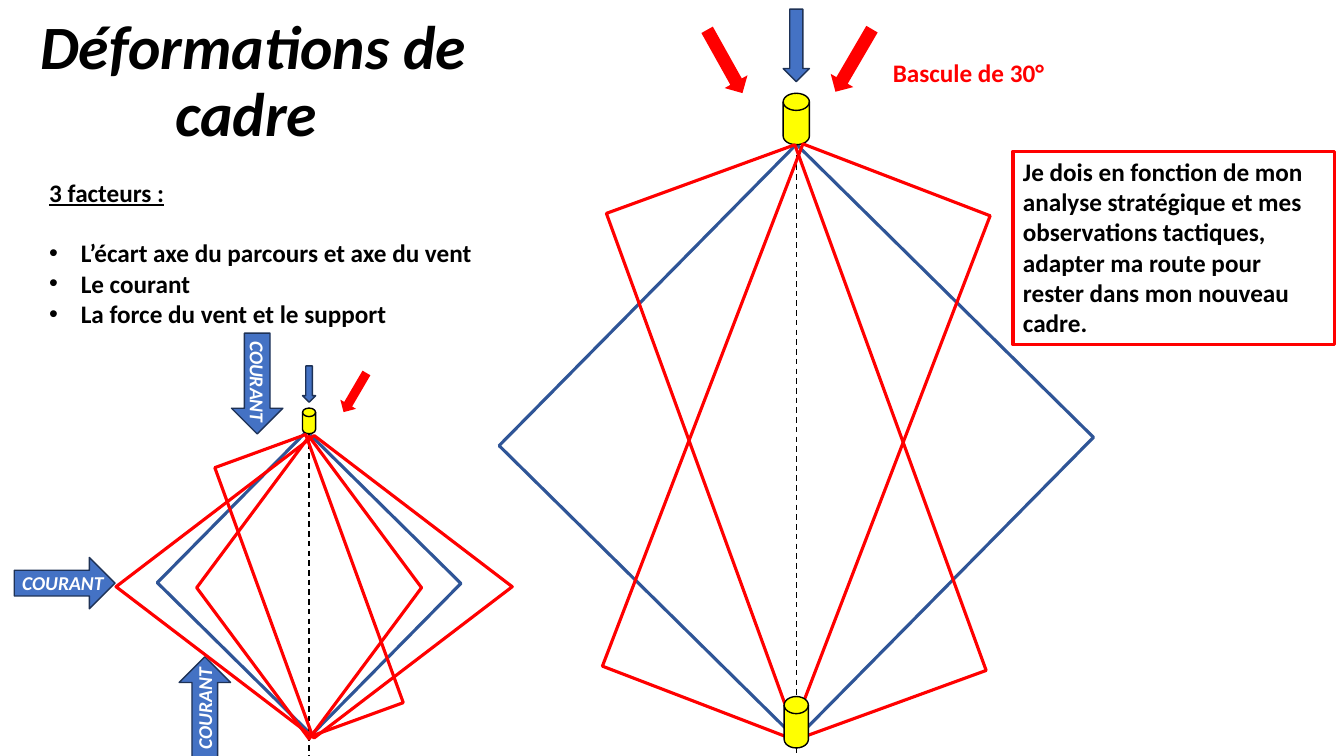
from lxml import etree
from pptx import Presentation
from pptx.dml.color import RGBColor
from pptx.enum import dml, shapes, text
from pptx.oxml import ns
from pptx.util import Pt

BLACK = RGBColor(0x00, 0x00, 0x00)
WHITE = RGBColor(0xFF, 0xFF, 0xFF)
RED = RGBColor(0xFF, 0x00, 0x00)
YELLOW = RGBColor(0xFF, 0xFF, 0x00)
BLUE = RGBColor(0x44, 0x72, 0xC4)
FRAME_BLUE = RGBColor(0x2F, 0x55, 0x97)
EDGE_BLUE = RGBColor(0x1E, 0x32, 0x56)
FONT = "Calibri"
SLIDE_W, SLIDE_H = 960, 540
S = shapes.MSO_SHAPE


def add_centred(s, kind, cx, cy, w, h, rot=0, fill=None, line=None, width=1):
    """Add a preset shape by its centre; no fill or line colour means none."""
    sp = s.shapes.add_shape(kind, Pt(cx - w / 2), Pt(cy - h / 2), Pt(w), Pt(h))
    sp.rotation = rot
    sp.shadow.inherit = False
    if fill is None:
        sp.fill.background()
    else:
        sp.fill.solid()
        sp.fill.fore_color.rgb = fill
    if line is None:
        sp.line.fill.background()
    else:
        sp.line.color.rgb = line
        sp.line.width = Pt(width)
    return sp


def add_outline(s, kind, cx, cy, w, h, rot=0, color=RED):
    return add_centred(s, kind, cx, cy, w, h, rot, line=color, width=2.25)


def add_buoy(s, cx, cy, w, h):
    add_centred(s, S.FLOWCHART_MAGNETIC_DISK, cx, cy, w, h, fill=YELLOW, line=BLACK)


def format_runs(p, size, color, italic=None):
    for r in p.runs:
        r.font.name = FONT
        r.font.size = Pt(size)
        r.font.bold = True
        r.font.italic = italic
        r.font.color.rgb = color


def add_text(s, x, y, w, h, lines, size, color, italic=None, wrap=True):
    sp = s.shapes.add_textbox(Pt(x), Pt(y), Pt(w), Pt(h))
    tf = sp.text_frame
    tf.word_wrap = wrap
    tf.text = "\n".join(lines)
    for p in tf.paragraphs:
        format_runs(p, size, color, italic)
    return sp


def add_title(s, x, y, w, h):
    sp = s.shapes.title
    sp.left, sp.top, sp.width, sp.height = Pt(x), Pt(y), Pt(w), Pt(h)
    tf = sp.text_frame
    tf.text = "Déformations de cadre "
    tf.word_wrap = True
    tf.auto_size = text.MSO_AUTO_SIZE.NONE
    tf.vertical_anchor = text.MSO_ANCHOR.MIDDLE
    p = tf.paragraphs[0]
    p.alignment = text.PP_ALIGN.CENTER
    p.line_spacing = 0.9
    format_runs(p, 44, BLACK, italic=True)


def add_factors(s, x, y, w, h):
    sp = add_text(s, x, y, w, h, [
        "3 facteurs :",
        "L’écart axe du parcours et axe du vent",
        "Le courant",
        "La force du vent et le support",
    ], 18, BLACK)
    heading, *factors = sp.text_frame.paragraphs
    heading.runs[0].font.underline = True
    heading.space_after = Pt(21.6)
    for p in factors:
        pPr = p._p.get_or_add_pPr()
        pPr.set("marL", str(Pt(22.5)))
        pPr.set("indent", str(Pt(-22.5)))
        etree.SubElement(pPr, ns.qn("a:buFont"), typeface="Arial")
        etree.SubElement(pPr, ns.qn("a:buChar"), char="•")


def add_course(s, axis, top, scale, frame, tilted):
    """Draw wind arrow, buoy, axis, blue frame and left-tilted red frame.

    frame and tilted are (centre below top, width, height).
    """
    cy, w, h = frame
    add_outline(s, S.RECTANGLE, axis, top + cy, w, h, 44.6, FRAME_BLUE)
    add_buoy(s, axis, top + 78.5 * scale, 18.7 * scale, 36.7 * scale)
    cx = s.shapes.add_connector(shapes.MSO_CONNECTOR.STRAIGHT, Pt(axis),
                                Pt(top + 97 * scale), Pt(axis), Pt(SLIDE_H))
    cx.line.color.rgb = BLACK
    cx.line.width = Pt(1)
    cx.line.dash_style = dml.MSO_LINE.DASH
    etree.SubElement(cx._element.spPr, ns.qn("a:effectLst"))
    add_centred(s, S.DOWN_ARROW, axis, top + 25.9 * scale, 18.7 * scale,
                51.8 * scale, fill=BLUE, line=EDGE_BLUE)
    cy, w, h = tilted
    add_outline(s, S.RECTANGLE, axis, top + cy, w, h, -20)


def add_wind_shift(s, axis, top):
    add_course(s, axis, top, 1, (308.9, 298.1, 302.4), (309.2, 143.3, 399.6))
    add_outline(s, S.RECTANGLE, axis, top + 308.5, 143.3, 399.6, 21)
    add_buoy(s, axis, top + 509.4, 17.3, 36.7)
    for dx, dy, rot in ((41, 36.7, 30.3), (-51.1, 37.4, -29.2)):
        add_centred(s, S.DOWN_ARROW, axis + dx, top + dy, 18.7, 51.8, rot, RED)
    add_text(s, axis + 61.9, top + 30.9, 126.7, 28.8, ["Bascule de 30°"],
             18, RED, wrap=False)


def add_current(s, cx, cy, rot, dx, dy):
    """Draw a current arrow whose label is shifted by (dx, dy) to its tip."""
    add_centred(s, S.RIGHT_ARROW, cx, cy, 72, 36.7, rot, BLUE, EDGE_BLUE)
    w, h = 87.8, 24.5
    sp = add_text(s, cx + dx - w / 2, cy + dy - h / 2, w, h, ["COURANT"],
                  14, WHITE, italic=True)
    sp.rotation = rot


def add_current_effects(s, axis, top):
    add_course(s, axis, top, 0.5, (155.1, 154.8, 151.9), (156.6, 69.1, 203.8))
    add_centred(s, S.DOWN_ARROW, axis + 32.8, top + 19, 13, 32.4, 30.3, RED)
    shift = 6.4
    add_current(s, axis - 174.6, top + 155.1, 0, shift, 0)
    add_current(s, axis - 37.1, top + 12.6, 90, 0, shift)
    add_current(s, axis - 74.5, top + 243.7, 270, 0, -shift)
    for dx, cy, w in ((0, 158.4, 160.6), (3.6, 157.7, 283)):
        add_outline(s, S.FLOWCHART_DECISION, axis + dx, top + cy, w, 216)


def add_advice(s, x, y, w, h):
    sp = add_text(s, x, y, w, h, [
        "Je dois en fonction de mon analyse stratégique et mes observations "
        "tactiques, adapter ma route pour rester dans mon nouveau cadre.",
    ], 18, BLACK)
    sp.line.color.rgb = RED
    sp.line.width = Pt(2.25)


def main():
    prs = Presentation()
    prs.slide_width, prs.slide_height = Pt(SLIDE_W), Pt(SLIDE_H)
    s = prs.slides.add_slide(prs.slide_layouts[5])
    add_title(s, 12.2, 7.2, 337.7, 104.4)
    add_wind_shift(s, axis=568.8, top=6.5)
    add_factors(s, 28.1, 123.1, 337.7, 138.2)
    add_current_effects(s, axis=220.8, top=261.4)
    add_advice(s, 723.6, 108, 229.7, 138.2)
    prs.save("out.pptx")


if __name__ == "__main__":
    main()
